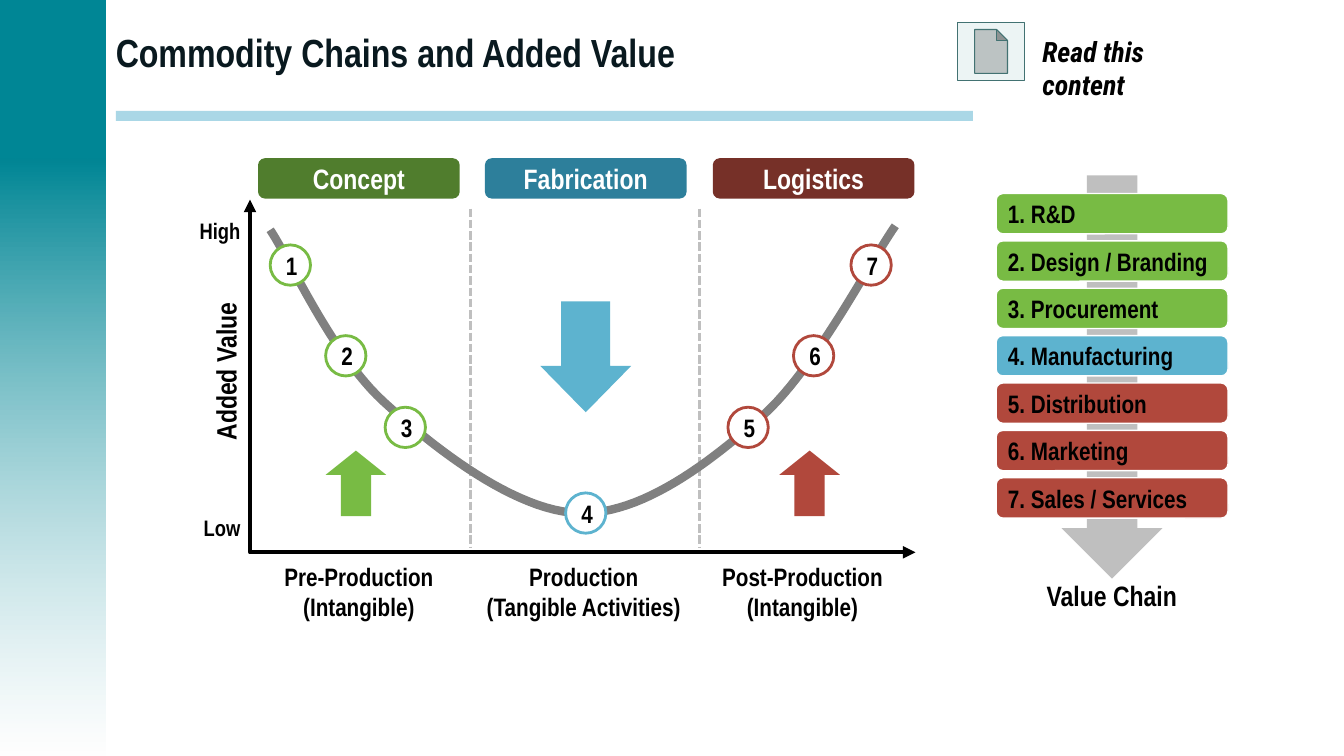
from dataclasses import dataclass

from lxml import etree
from pptx import Presentation
from pptx.dml.color import RGBColor
from pptx.enum.dml import MSO_LINE
from pptx.enum.shapes import MSO_CONNECTOR, MSO_SHAPE
from pptx.enum.text import MSO_ANCHOR, PP_ALIGN
from pptx.oxml.ns import qn
from pptx.shapes.autoshape import Shape
from pptx.util import Inches, Pt

RECT, ROUND, OVAL = MSO_SHAPE.RECTANGLE, MSO_SHAPE.ROUNDED_RECTANGLE, MSO_SHAPE.OVAL
DOWN, BUTTON = MSO_SHAPE.DOWN_ARROW, MSO_SHAPE.ACTION_BUTTON_DOCUMENT
STRAIGHT, DASH = MSO_CONNECTOR.STRAIGHT, MSO_LINE.SQUARE_DOT
LEFT, CENTER = PP_ALIGN.LEFT, PP_ALIGN.CENTER
TOP, MIDDLE = MSO_ANCHOR.TOP, MSO_ANCHOR.MIDDLE

COLORS = {
    "black": "000000", "white": "FFFFFF", "title": "09191F",
    "teal": "008695", "rule": "AAD7E6", "icon": "ECF4F4", "edge": "427272",
    "silver": "BFBFBF", "gray": "808080",
    "green": "78BB44", "blue": "5DB3CF", "red": "B1483C",
    "moss": "507D2D", "ocean": "2D7F9B", "wine": "763028",
}
Point = tuple[float, float]


@dataclass
class Stage:
    name: str
    color: str
    left: float
    caption: str
    center: float


@dataclass
class Step:
    name: str
    color: str
    left: float
    top: float


@dataclass
class Arrow:
    color: str
    box: tuple[float, float, float, float]
    stem: float
    head: float
    turn: int


STAGES = [
    Stage("Concept", "moss", 2.56, "Pre-Production\n(Intangible)", 3.56),
    Stage("Fabrication", "ocean", 4.81, "Production\n(Tangible Activities)", 5.79),
    Stage("Logistics", "wine", 7.07, "Post-Production\n(Intangible)", 7.96),
]
STEPS = [
    Step("R&D", "green", 2.68, 2.43),
    Step("Design / Branding", "green", 3.23, 3.33),
    Step("Procurement", "green", 3.82, 4.04),
    Step("Manufacturing", "blue", 5.61, 4.89),
    Step("Distribution", "red", 7.22, 4.04),
    Step("Marketing", "red", 7.87, 3.33),
    Step("Sales / Services", "red", 8.44, 2.43),
]
ARROWS = [
    Arrow("blue", (5.36, 2.99, 0.9, 1.1), 0.54, 0.51, 0),
    Arrow("red", (7.73, 4.47, 0.6, 0.65), 0.5, 0.4, 180),
    Arrow("green", (3.23, 4.47, 0.6, 0.65), 0.5, 0.4, 180),
]
AXES = [(2.48, 1.98), (2.48, 5.48), (9.08, 5.48)]
# Start point, then two controls and an end point for each Bezier piece
CURVE = [
    (2.68, 2.28),
    (2.87, 2.56), (3.29, 3.51), (3.8, 3.98),
    (4.31, 4.45), (5.11, 5.07), (5.74, 5.09),
    (6.37, 5.11), (7.05, 4.58), (7.58, 4.11),
    (8.1, 3.63), (8.61, 2.63), (8.88, 2.24),
]

deck = Presentation()
deck.slide_width, deck.slide_height = Inches(13.33), Inches(7.5)
slide = deck.slides.add_slide(deck.slide_layouts[6])
shapes = slide.shapes


def rgb(name: str) -> RGBColor:
    return RGBColor.from_string(COLORS[name])


def write(shape: Shape, text: str, *, size: int = 18, color: str = "black",
          font: str = "Arial Narrow", italic: bool = False, align: PP_ALIGN = LEFT,
          anchor: MSO_ANCHOR = MIDDLE, wrap: bool = True, inset: bool = True) -> None:
    frame = shape.text_frame
    frame.text, frame.word_wrap, frame.vertical_anchor = text, wrap, anchor
    if not inset:
        frame.margin_left = frame.margin_right = 0
        frame.margin_top = frame.margin_bottom = 0
    for para in frame.paragraphs:
        para.alignment = align
        face = para.font
        face.name, face.size, face.bold, face.italic = font, Pt(size), True, italic
        face.color.rgb = rgb(color)


def draw(kind: MSO_SHAPE, box: tuple[float, float, float, float], fill: str,
         line: str = "", width: float = 1) -> Shape:
    shape = shapes.add_shape(kind, *map(Inches, box))
    shape.shadow.inherit = False
    shape.fill.solid()
    shape.fill.fore_color.rgb = rgb(fill)
    if line:
        shape.line.color.rgb = rgb(line)
        shape.line.width = Pt(width)
    else:
        shape.line.fill.background()
    return shape


def label(box: tuple[float, float, float, float], text: str, **style) -> Shape:
    """Add a text box, unwrapped and without margins unless told otherwise."""
    shape = shapes.add_textbox(*map(Inches, box))
    write(shape, text, **{"anchor": TOP, "wrap": False, "inset": False, **style})
    return shape


def trace(points: list[Point], color: str, width: float) -> Shape:
    """Draw an open, unfilled outline through the points."""
    spots = [(Inches(x), Inches(y)) for x, y in points]
    pen = shapes.build_freeform(*spots[0], scale=1.0)
    pen.add_line_segments(spots[1:], close=False)
    shape = pen.convert_to_shape()
    shape.shadow.inherit = False
    shape.fill.background()
    shape.line.color.rgb = rgb(color)
    shape.line.width = Pt(width)
    return shape


def bend(knots: list[Point], count: int = 24) -> list[Point]:
    """Sample a chain of cubic Bezier pieces."""
    points = [knots[0]]
    for first in range(0, len(knots) - 1, 3):
        piece = knots[first:first + 4]
        for step in range(1, count + 1):
            t = step / count
            parts = ((1 - t) ** 3, 3 * t * (1 - t) ** 2, 3 * t * t * (1 - t), t ** 3)
            points.append((sum(w * p[0] for w, p in zip(parts, piece)),
                           sum(w * p[1] for w, p in zip(parts, piece))))
    return points


def draw_frame() -> None:
    draw(RECT, (-0.02, -0.01, 1.07, 1.58), "teal")
    fade = draw(RECT, (-0.02, 1.57, 1.07, 5.93), "teal")
    fade.fill.gradient()
    fade.fill.gradient_angle = 270
    for stop, color in zip(fade.fill.gradient_stops, ("teal", "white")):
        stop.color.rgb = rgb(color)
    last = list(fade.element.spPr.iter(qn("a:srgbClr")))[-1]
    etree.SubElement(last, qn("a:alpha")).set("val", "51000")
    draw(RECT, (1.15, 1.1, 8.5, 0.1), "rule")
    label((1.05, 0.01, 8.4, 1), "Commodity Chains and Added Value", size=28,
          color="title", anchor=MIDDLE, wrap=True, inset=True)
    draw(BUTTON, (9.5, 0.22, 0.66, 0.58), "icon", "edge", 0.75)
    label((10.24, 0.29, 1.86, 0.44), "Read this content", size=20,
          font="Roboto Condensed", italic=True, wrap=True, inset=True)


def draw_chart() -> None:
    for x in (4.67, 6.94):
        rule = shapes.add_connector(STRAIGHT, Inches(x), Inches(2.07), Inches(x), Inches(5.43))
        rule.line.color.rgb = rgb("silver")
        rule.line.width, rule.line.dash_style = Pt(2), DASH
        etree.SubElement(rule.element.spPr, qn("a:effectLst"))
    axes = trace(AXES, "black", 3)
    for end in ("a:headEnd", "a:tailEnd"):
        etree.SubElement(axes.element.spPr.find(qn("a:ln")), qn(end)).set("type", "triangle")
    label((1.55, 3.51, 1.38, 0.34), "Added Value", size=20).rotation = 270
    label((2.02, 5.1, 0.37, 0.27), "Low", size=16)
    label((1.98, 2.15, 0.41, 0.27), "High", size=16)
    trace(bend(CURVE), "gray", 6)
    for arrow in ARROWS:
        shape = draw(DOWN, arrow.box, arrow.color)
        shape.adjustments[0], shape.adjustments[1] = arrow.stem, arrow.head
        shape.rotation = arrow.turn
    for stage in STAGES:
        head = draw(ROUND, (stage.left, 1.57, 2, 0.4), stage.color)
        write(head, stage.name, size=20, color="white", align=CENTER)
        label((stage.center - 1, 5.57, 2, 0.61), stage.caption, align=CENTER)


def draw_steps() -> None:
    draw(DOWN, (10.53, 1.74, 1, 4), "silver")
    label((10.38, 5.74, 1.3, 0.34), "Value Chain", size=20)
    for rank, step in enumerate(STEPS):
        mark = draw(OVAL, (step.left, step.top, 0.4, 0.4), "white", step.color, 2)
        write(mark, str(rank + 1), align=CENTER)
        bar = draw(ROUND, (9.88, 1.92 + 0.47 * rank, 2.3, 0.4), step.color, "white")
        write(bar, f"{rank + 1}. {step.name}")


if __name__ == "__main__":
    draw_frame()
    draw_chart()
    draw_steps()
    deck.save("out.pptx")
